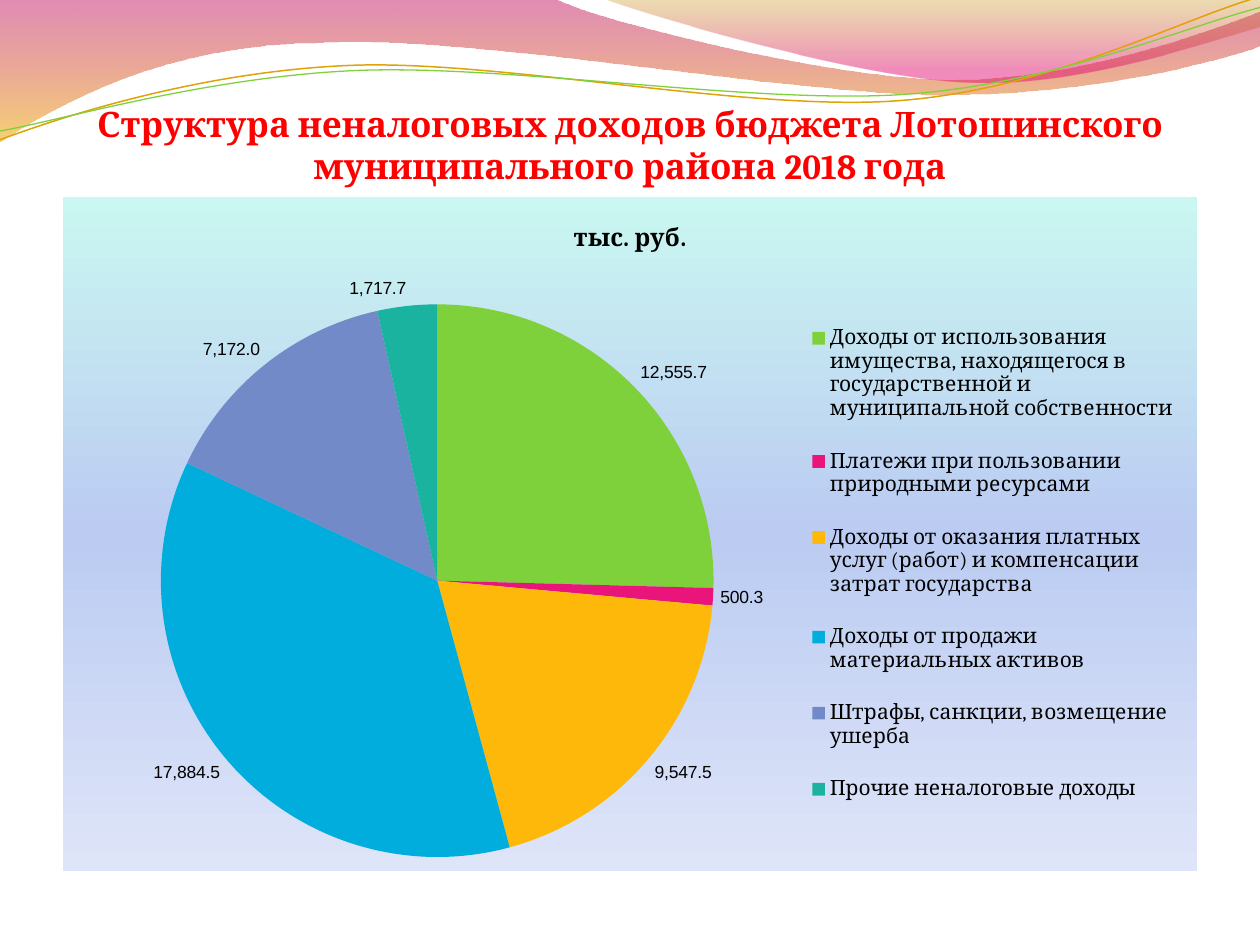
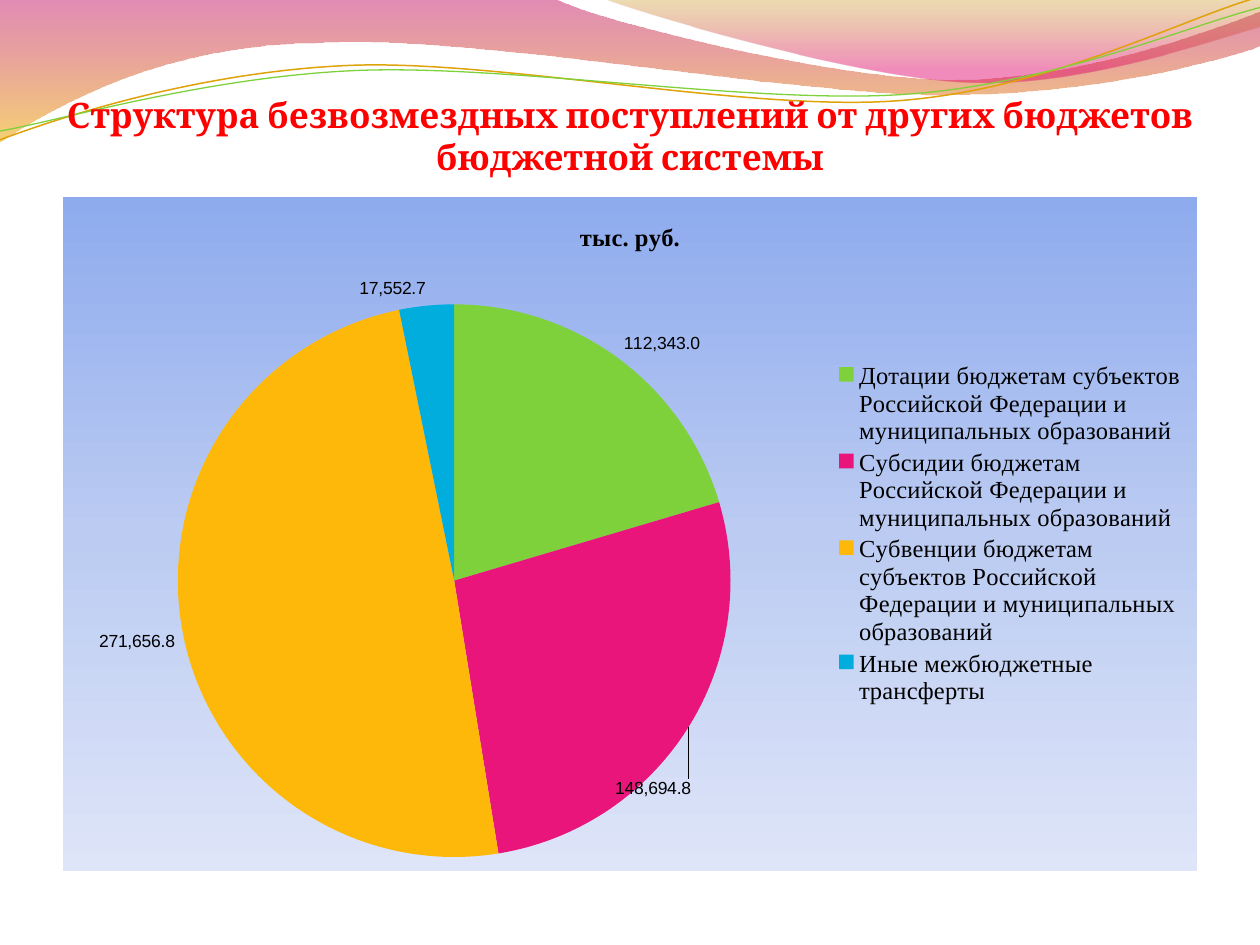
"""Builds two budget slides, each with a pie chart under a shared wave banner."""
import pptx
import pptx.chart.data
import pptx.dml.color
import pptx.enum.chart
import pptx.enum.text
import pptx.oxml
import pptx.oxml.ns
import pptx.util

Inches = pptx.util.Inches
Pt = pptx.util.Pt
RGBColor = pptx.dml.color.RGBColor
qn = pptx.oxml.ns.qn

UNIT = "тыс. руб."
SLIDES = [
    {
        "title": "Структура неналоговых доходов бюджета Лотошинского муниципального района 2018 года",
        "title_height": 0.71,
        "data": [
            ("Доходы от использования имущества, находящегося в государственной и муниципальной собственности", 12555.7),
            ("Платежи при пользовании природными ресурсами", 500.3),
            ("Доходы от оказания платных услуг (работ) и компенсации затрат государства", 9547.5),
            ("Доходы от продажи материальных активов", 17884.5),
            ("Штрафы, санкции, возмещение ушерба", 7172),
            ("Прочие неналоговые доходы", 1717.7),
        ],
        "font": "Cambria",
        "legend_size": 12,
        "top_color": RGBColor(0xCA, 0xF7, 0xF1),
        "pie_box": (0.08, 0.16, 0.5, 0.82),
        "legend_box": (0.66, 0.15, 0.32, 0.79),
        "label_shifts": {},
    },
    {
        "title": "Структура безвозмездных поступлений от других бюджетов бюджетной системы",
        "title_height": 0.64,
        "data": [
            ("Дотации бюджетам субъектов Российской Федерации и муниципальных образований", 112343),
            ("Субсидии бюджетам Российской Федерации и муниципальных образований", 148694.8),
            ("Субвенции бюджетам субъектов Российской Федерации и муниципальных образований", 271656.8),
            ("Иные межбюджетные трансферты", 17552.7),
        ],
        "font": "Times New Roman",
        "legend_size": 14,
        "top_color": RGBColor(0x8E, 0xAB, 0xEE),
        "pie_box": (0.1, 0.16, 0.49, 0.82),
        "legend_box": (0.68, 0.24, 0.31, 0.52),
        "label_shifts": {1: (-0.07, 0.07)},
    },
]

RED = RGBColor(0xFF, 0x00, 0x00)
BLACK = RGBColor(0x00, 0x00, 0x00)
GREEN = RGBColor(0x7F, 0xD1, 0x3B)
GOLD = RGBColor(0xE0, 0xA2, 0x09)
SLICE_COLORS = [
    GREEN,
    RGBColor(0xEA, 0x15, 0x7A),
    RGBColor(0xFE, 0xB8, 0x0A),
    RGBColor(0x00, 0xAD, 0xDC),
    RGBColor(0x73, 0x8A, 0xC8),
    RGBColor(0x1A, 0xB3, 0x9F),
]
PANEL_MIDDLE = RGBColor(0xBB, 0xCB, 0xF2)
PANEL_BOTTOM = RGBColor(0xDE, 0xE5, 0xF8)

BANDS = [
    (
        [(0, -0.01), (4.4, -0.01), (4.76, 0.17, 6.64, 0.63, 7.58, 0.63),
         (8.53, 0.63, 9.58, 0.26, 10, 0.09), (10.01, 0.36),
         (9.83, 0.44, 8.7, 0.76, 7.46, 0.75), (6.22, 0.75, 3.82, 0.28, 2.57, 0.34),
         (1.29, 0.35, 0.46, 0.83, -0.01, 1.13), (0, -0.01)],
        [(0, RGBColor(0xBD, 0x00, 0x59), 45), (100, RGBColor(0xF0, 0xAB, 0x00), 55)],
    ),
    (
        [(4.79, -0.01), (5.09, 0.11, 6.82, 0.62, 7.69, 0.65),
         (8.56, 0.69, 9.61, 0.32, 10, 0.21), (10, 0), (4.79, -0.01)],
        [(0, RGBColor(0xC3, 0x8B, 0x00), 30), (80, RGBColor(0xE1, 0x00, 0x6B), 45)],
    ),
]
WAVES = [
    (
        [(0, 1.11), (0.48, 0.93, 1.58, 0.57, 2.77, 0.52),
         (3.95, 0.47, 5.93, 0.89, 7.13, 0.8), (8.33, 0.71, 9.38, 0.15, 9.98, -0.02)],
        GOLD, 0.85,
    ),
    (
        [(0, 1.04), (0.47, 0.96, 1.64, 0.61, 2.83, 0.56),
         (4.03, 0.51, 5.97, 0.83, 7.17, 0.75), (8.36, 0.67, 9.41, 0.21, 10, 0.06)],
        GREEN, 0.75,
    ),
]


def add_outline(slide, outline, close):
    """Add a freeform whose six-number segments are Bézier curves."""
    points = [
        (Inches(x), Inches(y))
        for segment in outline for x, y in zip(segment[::2], segment[1::2])
    ]
    builder = slide.shapes.build_freeform(*points[0], scale=1.0)
    builder.add_line_segments(points[1:], close=close)
    shape = builder.convert_to_shape()
    shape.shadow.inherit = False
    shape.fill.background()
    lines = iter(shape.element.findall(".//" + qn("a:lnTo")))
    for segment in outline[1:]:
        line = next(lines)
        if len(segment) == 6:
            curve = pptx.oxml.parse_xml(f'<a:cubicBezTo {pptx.oxml.ns.nsdecls("a")}/>')
            line.addprevious(curve)
            for control in (line, next(lines), next(lines)):
                curve.append(control[0])
                control.getparent().remove(control)
    return shape


def gradient_fill(stops):
    stop_xml = "".join(
        f'<a:gs pos="{position * 1000}"><a:srgbClr val="{color}">'
        f'<a:alpha val="{opacity * 1000}"/></a:srgbClr></a:gs>'
        for position, color, opacity in stops
    )
    return pptx.oxml.parse_xml(
        f'<a:gradFill {pptx.oxml.ns.nsdecls("a")} rotWithShape="1"><a:gsLst>{stop_xml}</a:gsLst>'
        '<a:lin ang="5400000" scaled="0"/></a:gradFill>'
    )


def add_banner(layout, slide):
    """Draw the banner and hand it to the layout that all slides share."""
    for placeholder in list(layout.placeholders):
        if placeholder.placeholder_format.idx != 0:
            layout.shapes.element.remove(placeholder.element)
    shapes = []
    for outline, stops in BANDS:
        band = add_outline(slide, outline, True)
        band.line.fill.background()
        properties = band.element.spPr
        properties.replace(properties.find(qn("a:noFill")), gradient_fill(stops))
        shapes.append(band)
    for outline, color, width in WAVES:
        wave = add_outline(slide, outline, False)
        wave.line.color.rgb = color
        wave.line.width = Pt(width)
        shapes.append(wave)
    for shape in shapes:
        layout.shapes.element.append(shape.element)


def style_font(font, name, size, color, bold=False):
    font.name = name
    font.size = Pt(size)
    font.color.rgb = color
    font.bold = bold


def set_title(slide, text, height):
    title = slide.shapes.title
    title.left, title.top = Inches(0.5), Inches(0.77)
    title.width, title.height = Inches(9), Inches(height)
    frame = title.text_frame
    frame.text = text
    frame.word_wrap = True
    frame.auto_size = pptx.enum.text.MSO_AUTO_SIZE.NONE
    frame.vertical_anchor = pptx.enum.text.MSO_ANCHOR.BOTTOM
    frame.margin_left = frame.margin_right = frame.margin_bottom = 0
    frame.margin_top = Inches(0.05)
    paragraph = frame.paragraphs[0]
    paragraph.alignment = pptx.enum.text.PP_ALIGN.CENTER
    style_font(paragraph.runs[0].font, "Cambria", 20, RED, True)


def set_layout(element, index, box, prefix=""):
    """Place a chart part by fractions of the chart, or shift it if only x and y are given."""
    for old_layout in element.findall(qn("c:layout")):
        element.remove(old_layout)
    sizes = "".join(f'<c:{name} val="{value}"/>' for name, value in zip("xywh", box))
    element.insert(index, pptx.oxml.parse_xml(
        f'<c:layout {pptx.oxml.ns.nsdecls("c")}><c:manualLayout>{prefix}{sizes}'
        '</c:manualLayout></c:layout>'
    ))


def style_labels(series, shifts):
    labels = series.data_labels
    labels.show_value = True
    labels.show_percentage = False
    labels.number_format = "#,##0.0"
    labels.number_format_is_linked = False
    outside = pptx.enum.chart.XL_LABEL_POSITION.OUTSIDE_END
    labels.position = outside
    style_font(labels.font, "Arial", 10, BLACK)
    for index, shift in shifts.items():
        label = series.points[index].data_label
        label.position = outside
        style_font(label.font, "Arial", 10, BLACK)
        label_element = series.points[index].data_label.font and series._element.find(".//" + qn("c:dLbl"))
        set_layout(label_element, 1, shift)


def add_pie(slide, content):
    chart_data = pptx.chart.data.CategoryChartData(number_format="#,##0.0")
    chart_data.categories = [name for name, value in content["data"]]
    chart_data.add_series(UNIT, [value for name, value in content["data"]])
    chart = slide.shapes.add_chart(
        pptx.enum.chart.XL_CHART_TYPE.PIE,
        Inches(0.5), Inches(1.56), Inches(9), Inches(5.35), chart_data,
    ).chart
    style_font(chart.font, "Cambria", 18, BLACK)

    chart.has_title = True
    title_frame = chart.chart_title.text_frame
    title_frame.text = UNIT
    style_font(title_frame.paragraphs[0].runs[0].font, content["font"], 14, BLACK, True)

    chart.has_legend = True
    chart.legend.position = pptx.enum.chart.XL_LEGEND_POSITION.RIGHT
    chart.legend.include_in_layout = False
    style_font(chart.legend.font, content["font"], content["legend_size"], BLACK)

    plot = chart.plots[0]
    plot.vary_by_categories = True
    series = plot.series[0]
    for index, color in enumerate(SLICE_COLORS[:len(content["data"])]):
        fill = series.points[index].format.fill
        fill.solid()
        fill.fore_color.rgb = color
    style_labels(series, content["label_shifts"])

    chart_space = chart.element
    edges = '<c:xMode val="edge"/><c:yMode val="edge"/>'
    plot_area = chart_space.find(".//" + qn("c:plotArea"))
    set_layout(plot_area, 0, content["pie_box"], '<c:layoutTarget val="inner"/>' + edges)
    set_layout(chart_space.find(".//" + qn("c:legend")), 1, content["legend_box"], edges)
    panel = pptx.oxml.parse_xml(
        f'<c:spPr {pptx.oxml.ns.nsdecls("c", "a")}><a:ln><a:noFill/></a:ln></c:spPr>'
    )
    panel.insert(0, gradient_fill([
        (0, content["top_color"], 100), (50, PANEL_MIDDLE, 100), (100, PANEL_BOTTOM, 100),
    ]))
    chart_space.find(qn("c:txPr")).addprevious(panel)


def main():
    presentation = pptx.Presentation()
    presentation.slide_width, presentation.slide_height = Inches(10), Inches(7.5)
    layout = presentation.slide_layouts[5]
    for number, content in enumerate(SLIDES):
        slide = presentation.slides.add_slide(layout)
        if number == 0:
            add_banner(layout, slide)
        set_title(slide, content["title"], content["title_height"])
        add_pie(slide, content)
    presentation.save("out.pptx")


if __name__ == "__main__":
    main()
